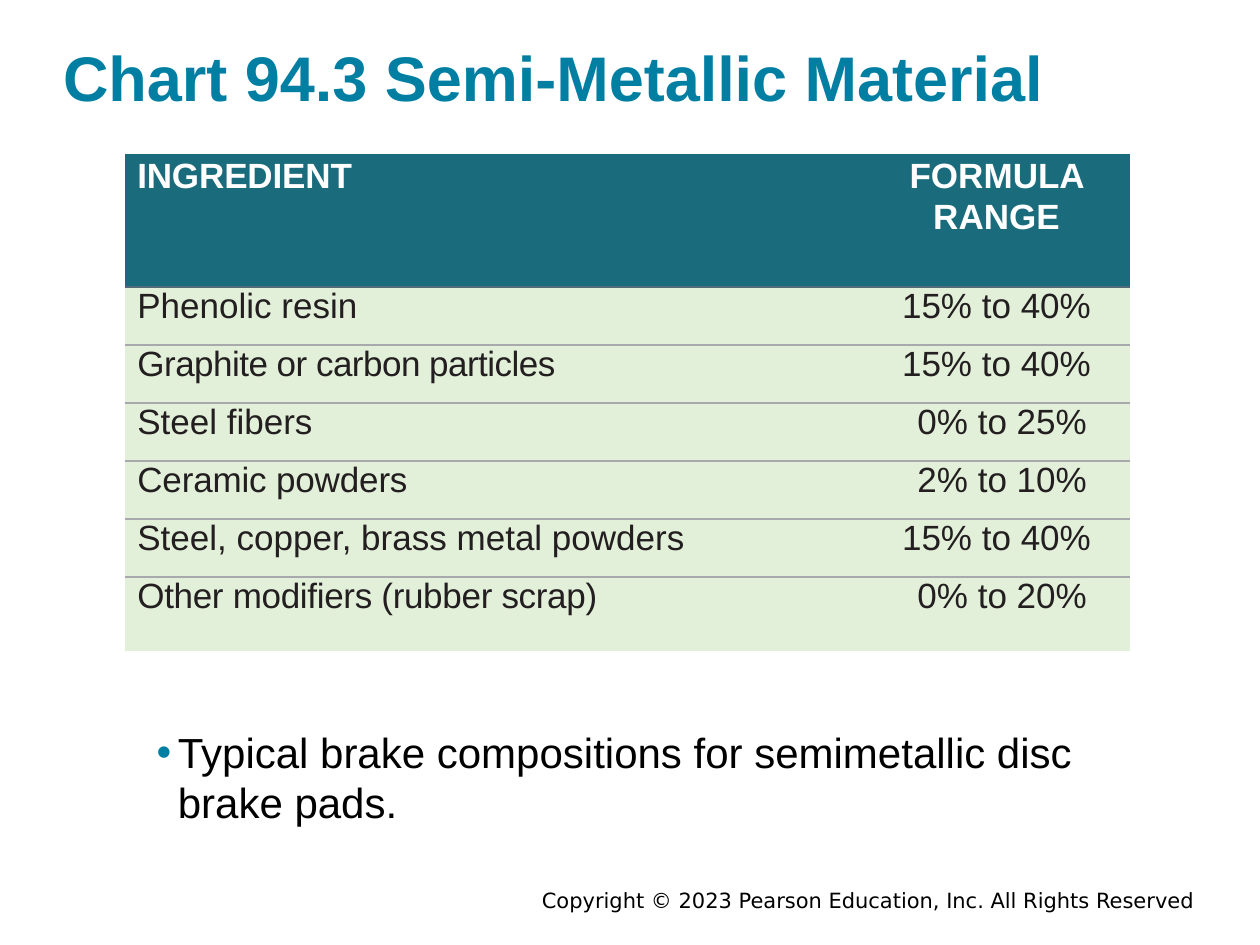
from dataclasses import dataclass

from lxml import etree
from pptx import Presentation
from pptx.dml import color
from pptx.enum import text
from pptx.oxml import ns
from pptx.util import Pt

TEAL, HEADER_FILL, ROW_FILL = "007FA3", "1A6C7C", "E2EFD9"
HEADER_RULE, ROW_RULE = "4F6B79", "A7A9AC"
WHITE, BLACK, INK = "FFFFFF", "000000", "231F20"
COLUMN_WIDTHS = (413.3, 161.2)
ROW_HEIGHTS = (76.3, *[33.12] * 5, 42.5)


@dataclass
class Ingredient:
    name: str
    formula: str
    spacing: float = 0
    indent: float = 8.6


@dataclass
class Style:
    size: float
    hex_color: str
    bold: bool = False
    font_name: str = "Arial"


INGREDIENTS = [
    Ingredient("Phenolic resin", "15% to 40%"),
    Ingredient("Graphite or carbon particles", "15% to 40%", -0.3),
    Ingredient("Steel fibers", "0% to 25%", indent=15.1),
    Ingredient("Ceramic powders", "2% to 10%", -0.1, 15.1),
    Ingredient("Steel, copper, brass metal powders", "15% to 40%"),
    Ingredient("Other modifiers (rubber scrap)", "0% to 20%", -0.2, 15.1),
]


def rgb(hex_color: str) -> color.RGBColor:
    return color.RGBColor.from_string(hex_color)


def add_run(paragraph, words: str, style: Style, spacing: float = 0) -> None:
    run = paragraph.add_run()
    run.text = words
    run.font.name = style.font_name
    run.font.size = Pt(style.size)
    run.font.bold = style.bold
    run.font.color.rgb = rgb(style.hex_color)
    if spacing:
        run._r.get_or_add_rPr().set("spc", str(round(spacing * 100)))


def set_indent(paragraph, left: float, first: float = 0) -> None:
    properties = paragraph._p.get_or_add_pPr()
    properties.set("marL", str(Pt(left)))
    properties.set("indent", str(Pt(first)))


def add_bullet(paragraph, character: str, hex_color: str) -> None:
    properties = paragraph._p.get_or_add_pPr()
    bullet_color = etree.SubElement(properties, ns.qn("a:buClr"))
    etree.SubElement(bullet_color, ns.qn("a:srgbClr"), val=hex_color)
    etree.SubElement(properties, ns.qn("a:buFont"), typeface="Arial")
    etree.SubElement(properties, ns.qn("a:buChar"), char=character)


def set_frame(frame, anchor, side: float) -> None:
    frame.word_wrap = True
    frame.auto_size = text.MSO_AUTO_SIZE.NONE
    frame.vertical_anchor = anchor
    frame.margin_left = frame.margin_right = Pt(side)
    frame.margin_top = frame.margin_bottom = Pt(3.6)


def set_borders(cell, top: str | None, bottom: str | None) -> None:
    properties = cell._tc.get_or_add_tcPr()
    for tag, hex_color in (("lnL", None), ("lnR", None), ("lnT", top), ("lnB", bottom)):
        line = etree.SubElement(properties, ns.qn(f"a:{tag}"), w=str(Pt(1)))
        if hex_color:
            fill = etree.SubElement(line, ns.qn("a:solidFill"))
            etree.SubElement(fill, ns.qn("a:srgbClr"), val=hex_color)
        else:
            etree.SubElement(line, ns.qn("a:noFill"))


def add_title(slide, words: str) -> None:
    title = slide.shapes.title
    title.left, title.top, title.width, title.height = Pt(36), Pt(18), Pt(648), Pt(51)
    set_frame(title.text_frame, text.MSO_ANCHOR.BOTTOM, 0)
    paragraph = title.text_frame.paragraphs[0]
    paragraph.alignment = text.PP_ALIGN.LEFT
    add_run(paragraph, words, Style(36, TEAL, True))


def fill_row(table, index: int, row: Ingredient) -> None:
    header = index == 0
    last = index == len(ROW_HEIGHTS) - 1
    rules = [None, HEADER_RULE, *[ROW_RULE] * len(INGREDIENTS)]
    style = Style(20, WHITE if header else INK, header)
    columns = (
        (row.name, text.PP_ALIGN.LEFT, 7.2, row.spacing),
        (row.formula, text.PP_ALIGN.CENTER, row.indent, 0),
    )
    for column, (words, alignment, indent, spacing) in enumerate(columns):
        cell = table.cell(index, column)
        cell.margin_left = cell.margin_right = cell.margin_top = cell.margin_bottom = 0
        set_borders(cell, rules[index], None if last else rules[index + 1])
        cell.fill.solid()
        cell.fill.fore_color.rgb = rgb(HEADER_FILL if header else ROW_FILL)
        paragraph = cell.text_frame.paragraphs[0]
        paragraph.alignment = alignment
        if header:
            paragraph.line_spacing = 1.07
        set_indent(paragraph, indent)
        add_run(paragraph, words, style, spacing)


def add_ingredient_table(slide) -> None:
    rows = [Ingredient("INGREDIENT", "FORMULA RANGE", -0.1), *INGREDIENTS]
    frame = slide.shapes.add_table(
        len(rows), len(COLUMN_WIDTHS), Pt(71.3), Pt(87.8),
        Pt(sum(COLUMN_WIDTHS)), Pt(sum(ROW_HEIGHTS)),
    )
    table = frame.table
    table.first_row = table.horz_banding = False
    for column, width in zip(table.columns, COLUMN_WIDTHS):
        column.width = Pt(width)
    for index, (row, height) in enumerate(zip(rows, ROW_HEIGHTS)):
        table.rows[index].height = Pt(height)
        fill_row(table, index, row)


def add_summary(slide, words: str) -> None:
    box = slide.shapes.add_textbox(Pt(81.4), Pt(411.1), Pt(543.6), Pt(65.5))
    set_frame(box.text_frame, text.MSO_ANCHOR.MIDDLE, 0)
    paragraph = box.text_frame.paragraphs[0]
    set_indent(paragraph, 20.2, -12.2)
    add_bullet(paragraph, "•", TEAL)
    add_run(paragraph, words, Style(24, BLACK))


def add_copyright(slide, words: str) -> None:
    box = slide.shapes.add_textbox(Pt(126), Pt(506.2), Pt(563.8), Pt(15.8))
    set_frame(box.text_frame, text.MSO_ANCHOR.MIDDLE, 7.2)
    paragraph = box.text_frame.paragraphs[0]
    paragraph.alignment = text.PP_ALIGN.RIGHT
    add_run(paragraph, words, Style(12, BLACK, font_name="DejaVu Sans"))


def main() -> None:
    presentation = Presentation()
    presentation.slide_width, presentation.slide_height = Pt(720), Pt(540)
    slide = presentation.slides.add_slide(presentation.slide_layouts[5])
    add_copyright(slide, "Copyright © 2023 Pearson Education, Inc. All Rights Reserved")
    add_title(slide, "Chart 94.3 Semi-Metallic Material")
    add_ingredient_table(slide)
    add_summary(slide, "Typical brake compositions for semimetallic disc brake pads.")
    presentation.save("out.pptx")


if __name__ == "__main__":
    main()
